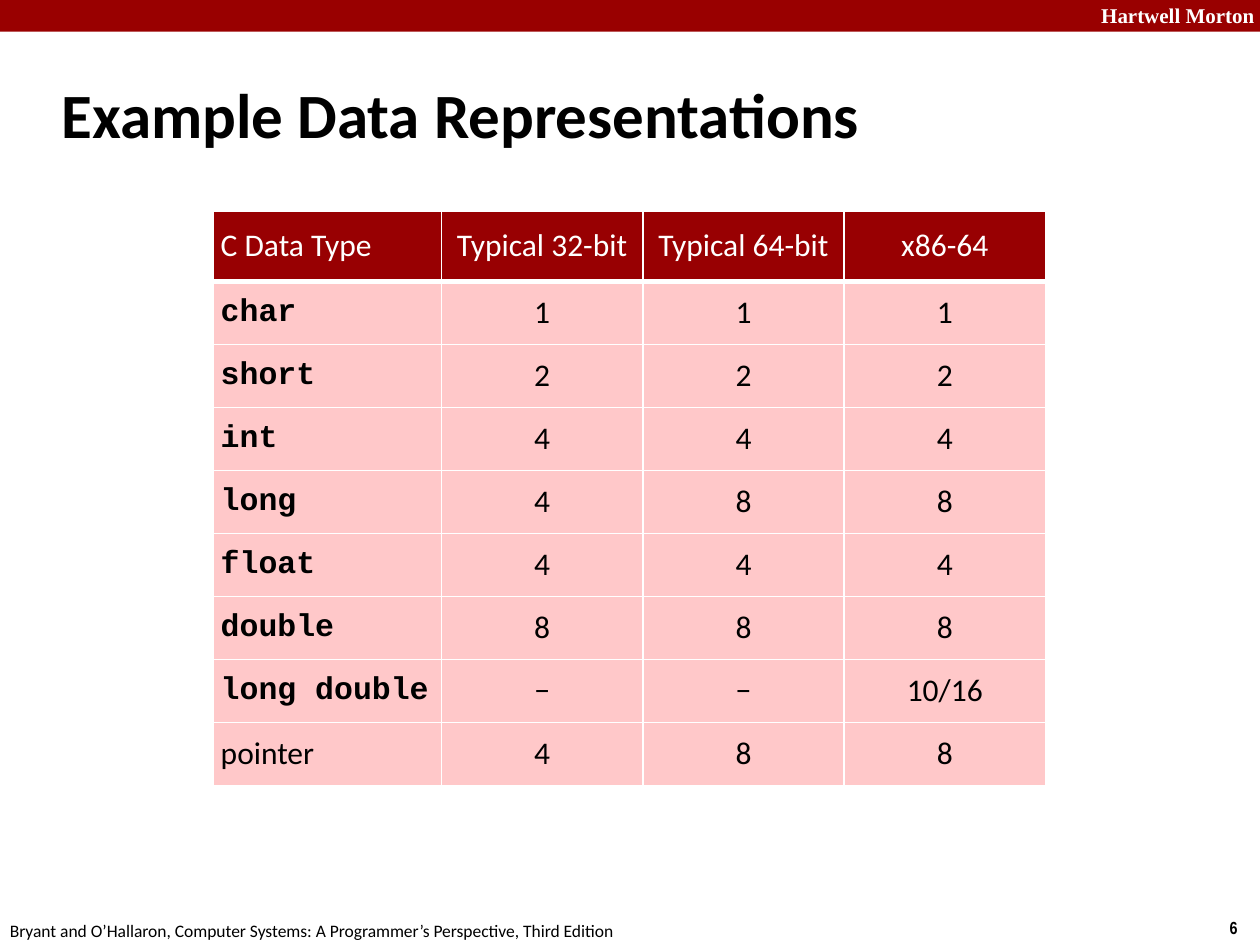
from lxml import etree
from pptx import Presentation
from pptx import util as u
from pptx.dml import color
from pptx.enum import shapes, text
from pptx.oxml import ns

COLORS = {
    "bar": "990000",
    "header": "980002",
    "body": "FFC8C9",
    "white": "FFFFFF",
    "black": "000000",
}
ROWS = [
    ("C Data Type", "Typical 32-bit", "Typical 64-bit", "x86-64"),
    ("char", "1", "1", "1"),
    ("short", "2", "2", "2"),
    ("int", "4", "4", "4"),
    ("long", "4", "8", "8"),
    ("float", "4", "4", "4"),
    ("double", "8", "8", "8"),
    ("long double", "−", "−", "10/16"),
    ("pointer", "4", "8", "8"),
]


def write(frame, words, size, font_name, color_name, bold=False):
    frame.text = words
    font = frame.paragraphs[0].runs[0].font
    font.size = u.Pt(size)
    font.name = font_name
    font.bold = bold
    font.color.rgb = color.RGBColor.from_string(COLORS[color_name])


def add_border(cell, side, points):
    properties = cell._tc.get_or_add_tcPr()
    line = etree.SubElement(properties, ns.qn(f"a:ln{side}"), w=str(u.Pt(points)))
    fill = etree.SubElement(line, ns.qn("a:solidFill"))
    etree.SubElement(fill, ns.qn("a:srgbClr"), val=COLORS["white"])


presentation = Presentation()
presentation.slide_width = u.Cm(25.4)
presentation.slide_height = u.Cm(19.05)
slide = presentation.slides.add_slide(presentation.slide_layouts[6])

# Top bar
bar = slide.shapes.add_shape(
    shapes.MSO_SHAPE.RECTANGLE, 0, 0, presentation.slide_width, u.Cm(0.64)
)
bar.shadow.inherit = False
bar.fill.solid()
bar.fill.fore_color.rgb = color.RGBColor.from_string(COLORS["bar"])
bar.line.fill.background()

# Text boxes: left, top, width, height, wrap, anchor, then the text and its format
top, middle = text.MSO_ANCHOR.TOP, text.MSO_ANCHOR.MIDDLE
citation = (
    "Bryant and O’Hallaron, Computer Systems: "
    "A Programmer’s Perspective, Third Edition"
)
text_boxes = [
    (21.95, -0.08, 3.63, 0.76, True, top,
     ("Hartwell Morton", 12, "Times New Roman", "white", True)),
    (24.54, 18.36, 0.86, 0.69, False, top, ("6", 10, "Arial Narrow", "black", True)),
    (-0.05, 18.42, 12.9, 0.69, False, top, (citation, 10, "Calibri", "black")),
    (0.99, 1.22, 21.08, 2.11, True, middle,
     ("Example Data Representations", 36, "Calibri", "black", True)),
]
for left, y, width, height, wrap, anchor, content in text_boxes:
    box = slide.shapes.add_textbox(u.Cm(left), u.Cm(y), u.Cm(width), u.Cm(height))
    box.text_frame.word_wrap = wrap
    box.text_frame.vertical_anchor = anchor
    write(box.text_frame, *content)

# Table of type sizes in bytes
table = slide.shapes.add_table(
    len(ROWS), len(ROWS[0]), u.Cm(4.3), u.Cm(4.25), u.Cm(16.78), u.Cm(11.58)
).table
for column, width in zip(table.columns, (4.6, 4.06, 4.06, 4.06)):
    column.width = u.Cm(width)

for row_index, values in enumerate(ROWS):
    is_header = row_index == 0
    table.rows[row_index].height = u.Cm(1.42 if is_header else 1.27)
    for column_index, value in enumerate(values):
        cell = table.cell(row_index, column_index)
        is_keyword = column_index == 0 and not is_header and value != "pointer"
        write(
            cell.text_frame,
            value,
            18,
            "Courier New" if is_keyword else "Calibri",
            "white" if is_header else "black",
            is_keyword,
        )
        if column_index > 0:
            cell.text_frame.paragraphs[0].alignment = text.PP_ALIGN.CENTER
        cell.vertical_anchor = middle
        cell.margin_left = cell.margin_right = u.Cm(0.15)
        cell.margin_top = cell.margin_bottom = u.Cm(0.15)
        add_border(cell, "L", 1)
        add_border(cell, "R", 1)
        add_border(cell, "T", 3 if row_index == 1 else 1)
        add_border(cell, "B", 3 if is_header else 1)
        cell.fill.solid()
        cell.fill.fore_color.rgb = color.RGBColor.from_string(
            COLORS["header" if is_header else "body"]
        )

presentation.save("out.pptx")
